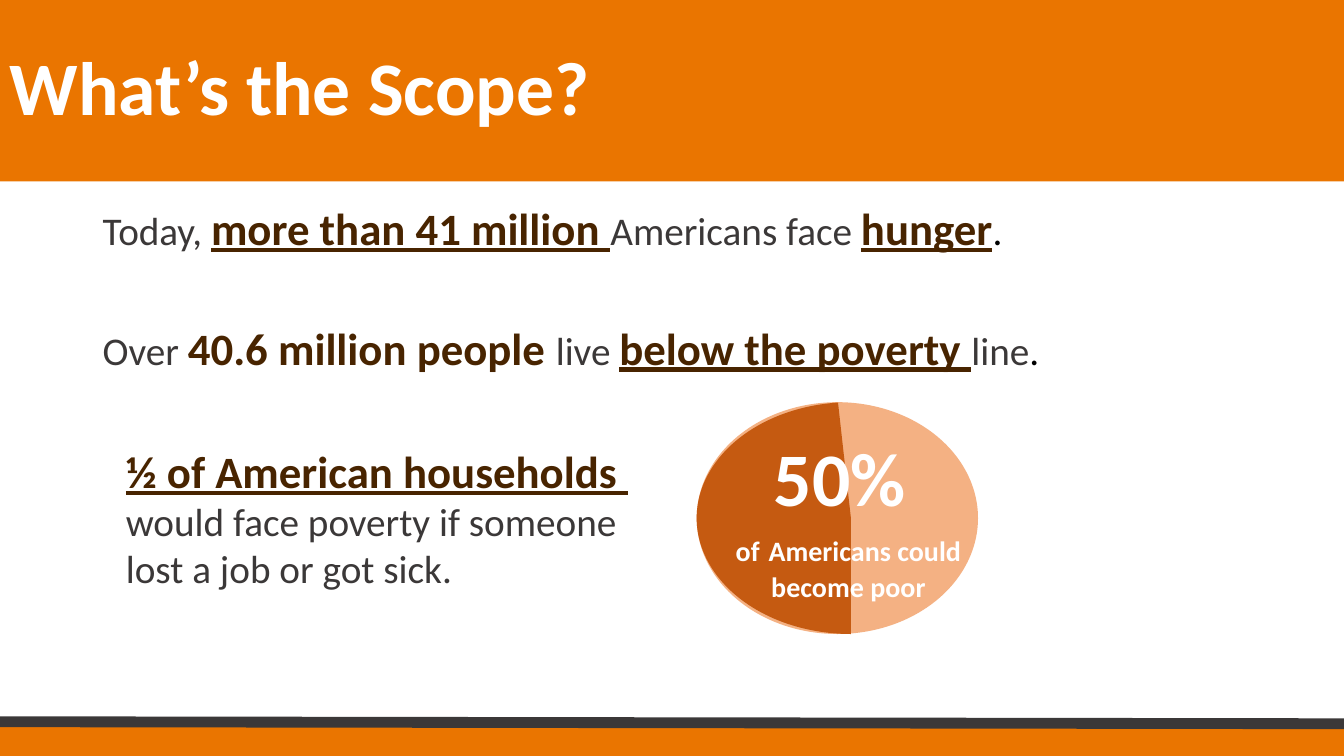
from lxml import etree
from pptx import Presentation
from pptx import util as u
from pptx.dml.color import RGBColor
from pptx.enum import shapes, text
from pptx.oxml.ns import qn

ORANGE, GRAY, BROWN, WHITE = "EA7500", "3B3838", "482400", "FFFFFF"
PLAIN = dict(size=28, color=GRAY)
STRONG = dict(size=32, color=BROWN, bold=True)
KEY = dict(STRONG, underline=True)
STOP = dict(size=28, color="000000")


def color(value):
    return RGBColor.from_string(value)


def add_run(paragraph, words, size=28, color_hex=None, color=GRAY, bold=False, underline=False):
    run = paragraph.add_run()
    run.text = words
    run.font.name = "Calibri"
    run.font.size = u.Pt(size)
    run.font.bold = bold
    run.font.underline = underline
    run.font.color.rgb = RGBColor.from_string(color_hex or color)


def fill_text(frame, paragraphs, align=text.PP_ALIGN.LEFT, line_spacing=None, gap=0):
    frame.word_wrap = True
    for index, runs in enumerate(paragraphs):
        paragraph = frame.add_paragraph() if index else frame.paragraphs[0]
        paragraph.alignment = align
        paragraph.line_spacing = line_spacing
        if index and gap:
            paragraph.space_before = u.Pt(gap)
        for words, style in runs:
            add_run(paragraph, words, **style)


def add_text(slide, box, paragraphs, **layout):
    textbox = slide.shapes.add_textbox(*map(u.Inches, box))
    fill_text(textbox.text_frame, paragraphs, **layout)


def add_solid(slide, preset, box, fill):
    shape = slide.shapes.add_shape(preset, *map(u.Inches, box))
    shape.shadow.inherit = False
    shape.fill.solid()
    shape.fill.fore_color.rgb = color(fill)
    shape.line.fill.background()
    return shape


def add_footer(slide, left, top, width, height):
    add_solid(slide, shapes.MSO_SHAPE.RECTANGLE, (left, top, width, height), ORANGE)
    rule = slide.shapes.add_connector(
        shapes.MSO_CONNECTOR.STRAIGHT,
        *map(u.Inches, (left, top - 0.02, left + width, top)))
    rule.line.color.rgb = color(GRAY)
    rule.line.width = u.Pt(7.75)
    etree.SubElement(rule._element.spPr, qn("a:effectLst"))


def add_title(slide, box, words):
    banner = add_solid(slide, shapes.MSO_SHAPE.RECTANGLE, box, ORANGE)
    banner.text_frame.vertical_anchor = text.MSO_ANCHOR.MIDDLE
    fill_text(banner.text_frame, [[(words, dict(size=54, color=WHITE, bold=True))]],
              line_spacing=0.9)


def add_facts(slide, box):
    add_text(slide, box, [
        [("Today, ", PLAIN), ("more than 41 million ", KEY),
         ("Americans face ", PLAIN), ("hunger", KEY), (".", STOP)],
        [("Over ", PLAIN), ("40.6 million people ", STRONG), ("live ", PLAIN),
         ("below the poverty ", KEY), ("line", PLAIN), (".", STOP)],
    ], line_spacing=0.9, gap=51)


def add_households(slide, box):
    add_text(slide, box, [
        [("½ of American households ", KEY)],
        [("would face poverty if someone lost a job or got sick.", PLAIN)],
    ])


def add_half_circle(slide, left, top, width, height):
    add_solid(slide, shapes.MSO_SHAPE.OVAL, (left, top, width, height), "F4B183")
    half = add_solid(slide, shapes.MSO_SHAPE.PIE, (left, top, width + 0.27, height), "C55A11")
    half.adjustments[0] = 54
    half.adjustments[1] = 158.18
    small = dict(size=20, color=WHITE, bold=True)
    add_text(slide, (left + 0.09, top + 0.24, width + 0.04, height - 0.48), [
        [("50% ", dict(small, size=54))],
        [("of", small), (" ", dict(small, size=28)), ("Americans could become poor", small)],
    ], align=text.PP_ALIGN.CENTER)


def main():
    presentation = Presentation()
    presentation.slide_width = u.Inches(13.33)
    presentation.slide_height = u.Inches(7.5)
    slide = presentation.slides.add_slide(presentation.slide_layouts[6])
    add_footer(slide, 0, 7.18, 13.33, 0.32)
    add_title(slide, (0, 0, 13.33, 1.8), "What’s the Scope?")
    add_facts(slide, (0.92, 2, 11.5, 2.16))
    add_households(slide, (1.15, 4.35, 5.32, 1.58))
    add_half_circle(slide, 6.91, 3.99, 2.79, 2.3)
    presentation.save("out.pptx")


if __name__ == "__main__":
    main()
